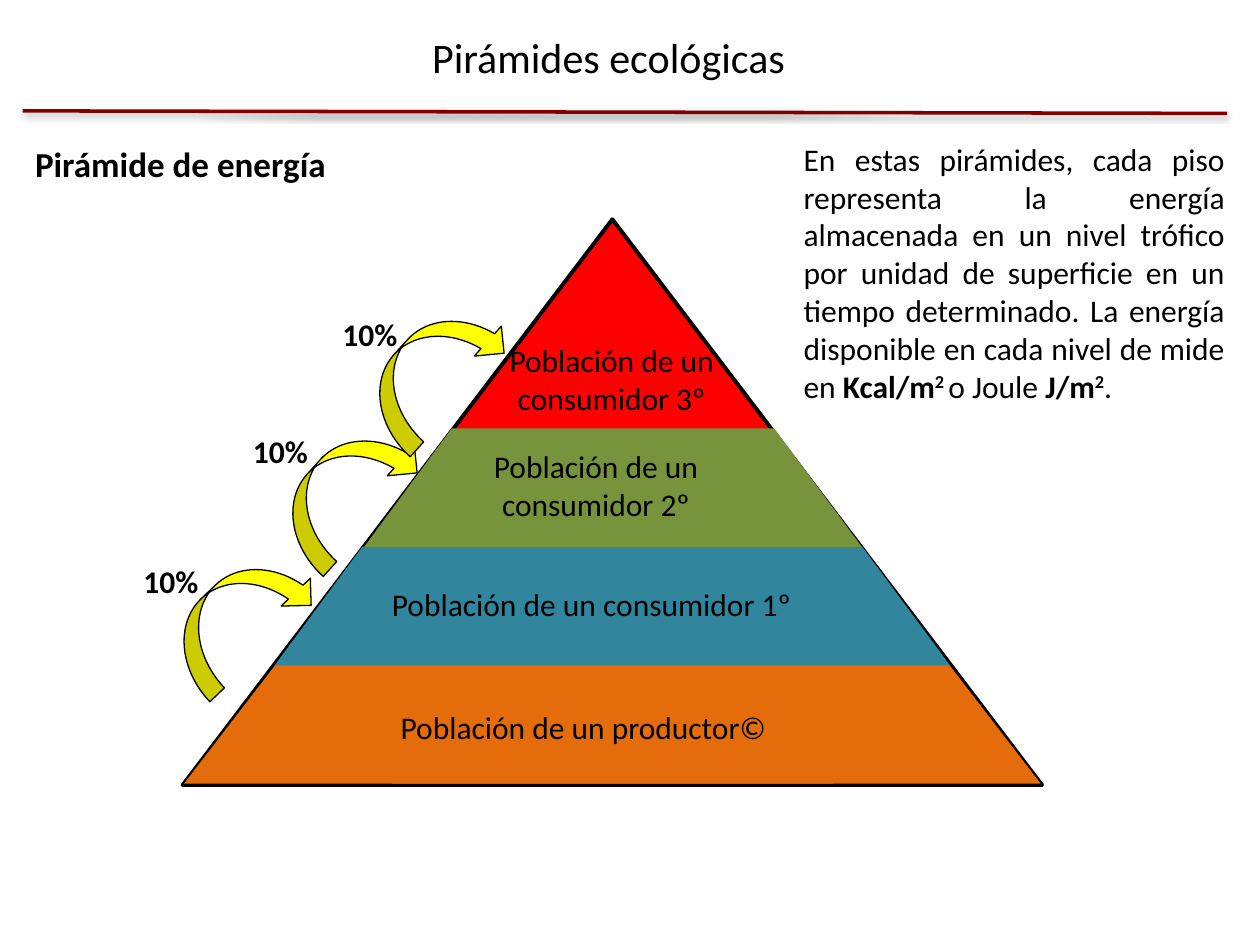
from lxml import etree
from pptx import Presentation
from pptx.dml.color import RGBColor
from pptx.enum.shapes import MSO_CONNECTOR, MSO_SHAPE
from pptx.enum.text import MSO_ANCHOR, PP_ALIGN
from pptx.oxml.ns import qn
from pptx.util import Inches, Pt

LEFT, MID, FULL = PP_ALIGN.LEFT, PP_ALIGN.CENTER, PP_ALIGN.JUSTIFY
TOP = MSO_ANCHOR.TOP
TRI, TRAP = MSO_SHAPE.ISOSCELES_TRIANGLE, MSO_SHAPE.TRAPEZOID
CURVE = MSO_SHAPE.CURVED_DOWN_ARROW
LINE = MSO_CONNECTOR.STRAIGHT
FONT, BLACK = "Calibri", "000000"
ORANGE, TEAL, GREEN = "E46C0A", "31859C", "77933C"
RED, YELLOW, MAROON = "FF0000", "FFFF00", "800000"


def color(code):
    return RGBColor.from_string(code)


def write(frame, text, size=18, bold=False, align=LEFT):
    """Fill a frame; text is a string or a list of (text, bold, raised)."""
    frame.word_wrap = True
    frame.vertical_anchor = TOP
    para = frame.paragraphs[0]
    para.alignment = align
    parts = [(text, bold, False)] if isinstance(text, str) else text
    for words, heavy, raised in parts:
        run = para.add_run()
        run.text = words
        font = run.font
        font.name, font.size, font.bold = FONT, Pt(size), heavy
        font.color.rgb = color(BLACK)
        if raised:
            run._r.get_or_add_rPr().set("baseline", "30000")


class Deck:
    def __init__(self):
        self.prs = Presentation()
        self.prs.slide_width, self.prs.slide_height = Inches(10), Inches(7.5)
        self.slide = self.prs.slides.add_slide(self.prs.slide_layouts[5])
        self.shapes = self.slide.shapes

    def title(self, text, *box):
        item = self.shapes.title
        item.left, item.top, item.width, item.height = map(Inches, box)
        write(item.text_frame, text, size=24, align=MID)

    def text(self, text, *box, **style):
        item = self.shapes.add_textbox(*map(Inches, box))
        write(item.text_frame, text, **style)

    def shape(self, kind, fill, *box, line=None, turn=0, slant=None):
        item = self.shapes.add_shape(kind, *map(Inches, box))
        item.shadow.inherit = False
        item.fill.solid()
        item.fill.fore_color.rgb = color(fill)
        item.rotation = turn
        if slant:
            item.adjustments[0] = slant
        if line:
            item.line.color.rgb = color(BLACK)
            item.line.width = Pt(line)
        else:
            item.line.fill.background()

    def rule(self, *ends):
        """Draw the line under the title, with a soft shadow below it."""
        item = self.shapes.add_connector(LINE, *map(Inches, ends))
        item.line.color.rgb = color(MAROON)
        item.line.width = Pt(2)
        effects = etree.SubElement(item._element.spPr, qn("a:effectLst"))
        shade = etree.SubElement(effects, qn("a:outerShdw"), blurRad="40000",
                                 dist="20000", dir="5400000", rotWithShape="0")
        tint = etree.SubElement(shade, qn("a:srgbClr"), val=BLACK)
        etree.SubElement(tint, qn("a:alpha"), val="38000")


def main():
    deck = Deck()
    deck.rule(0.18, 0.88, 9.74, 0.9)
    deck.title("Pirámides ecológicas", 1.94, 0.2, 5.78, 0.5)

    deck.shape(TRI, RED, 1.45, 1.74, 6.82, 4.49, line=2.25)
    high = 0.94
    floors = [(ORANGE, 1.46, 5.28, 5.15, 0.77), (ORANGE, 3.11, 5.28, 5.15, 0.77),
              (TEAL, 2.18, 4.34, 5.36, 0.74), (GREEN, 2.89, 3.4, 3.95, 0.74)]
    for fill, left, top, wide, slant in floors:
        deck.shape(TRAP, fill, left, top, wide, high, slant=slant)

    steps = [(1.27, 4.58, 316.4, 1.04, 4.41), (2.12, 3.57, 312.2, 1.91, 3.38),
             (2.81, 2.62, 312.2, 2.62, 2.45)]
    for left, top, turn, _, _ in steps:
        deck.shape(CURVE, YELLOW, left, top, 1.27, 0.64, line=0.75, turn=turn)
    for _, _, _, left, top in steps:
        deck.text("10%", left, top, 1.54, 0.4, bold=True)

    deck.text("Pirámide de energía", 0.18, 1.08, 3.6, 0.44, size=20, bold=True)
    names = [("productor©", 2.99, 5.57, 3.28, 0.4),
             ("consumidor 1º", 2.99, 4.59, 3.41, 0.4),
             ("consumidor 2º", 3.22, 3.5, 3.02, 0.71),
             ("consumidor 3º", 3.67, 2.66, 2.37, 0.71)]
    for name, *box in names:
        deck.text(f"Población de un {name}", *box, align=MID)

    about = ("En estas pirámides, cada piso representa la energía almacenada en un "
             "nivel trófico por unidad de superficie en un tiempo determinado. "
             "La energía disponible en cada nivel de mide en ")
    deck.text([(about, False, False), ("Kcal/m", True, False), ("2 ", True, True),
               ("o Joule ", False, False), ("J/m", True, False),
               ("2", True, True), (".", False, False)],
              6.28, 1.06, 3.54, 2.22, align=FULL)
    deck.prs.save("out.pptx")


if __name__ == "__main__":
    main()
